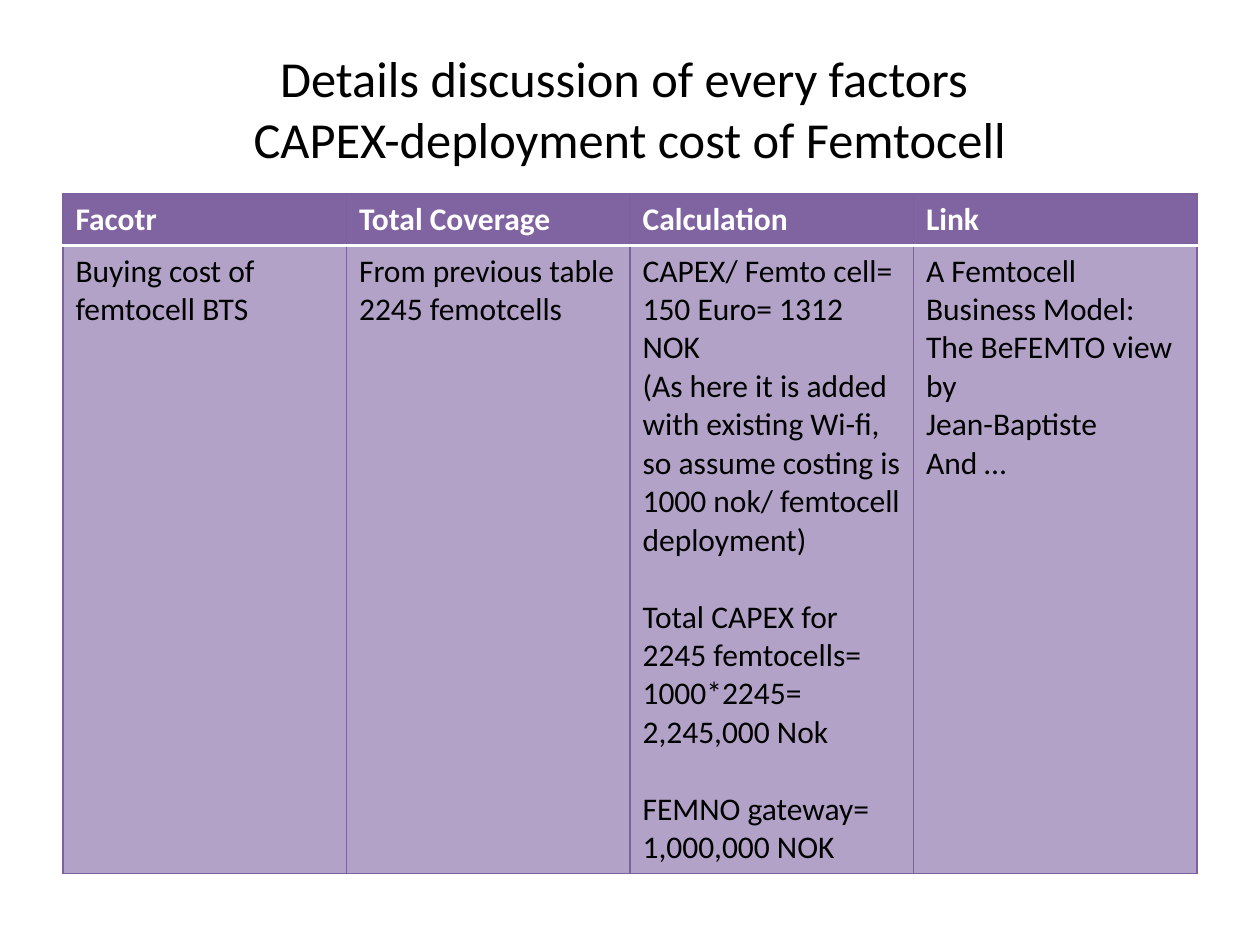
from lxml import etree
from pptx import Presentation
from pptx import util as u
from pptx.dml.color import RGBColor
from pptx.enum import text
from pptx.oxml.ns import qn

PX = 9144  # EMU per px, 100 px to the inch
FONT = "Calibri"
COLORS = {"ink": "000000", "white": "FFFFFF", "header": "8064A2",
          "body": "B3A2C7", "border": "7D60A0"}
LINE_GAP = 22  # points, one line of body text

HEADER = ["Facotr", "Total Coverage", "Calculation", "Link"]
# Each cell is a list of blocks, set one line apart; a block is a list of paragraphs
BODY = [
    [["Buying cost of femtocell BTS"]],
    [["From previous table", "2245 femotcells"]],
    [["CAPEX/ Femto cell= 150 Euro= 1312 NOK",
      "(As here it is added with existing Wi-fi, so assume costing is "
      "1000 nok/ femtocell deployment)"],
     ["Total CAPEX for 2245 femtocells= 1000*2245= 2,245,000 Nok"],
     ["FEMNO gateway= 1,000,000 NOK"]],
    [["A Femtocell Business Model:", "The BeFEMTO view by",
      "Jean-Baptiste", "And …"]],
]


class SlideBuilder:
    def __init__(self, deck):
        self.page = deck.slides.add_slide(deck.slide_layouts[5])

    def format_paragraph(self, para, size, color, bold=False):
        for span in para.runs:
            span.font.name = FONT
            span.font.size = u.Pt(size)
            span.font.bold = bold
            span.font.color.rgb = RGBColor.from_string(COLORS[color])

    def title(self, words, left, top, width, height):
        box = self.page.shapes.title
        box.left, box.top, box.width, box.height = (
            n * PX for n in (left, top, width, height))
        frame = box.text_frame
        frame.text = words
        frame.word_wrap = True
        frame.auto_size = text.MSO_AUTO_SIZE.NONE
        frame.vertical_anchor = text.MSO_ANCHOR.MIDDLE
        frame.paragraphs[0].alignment = text.PP_ALIGN.CENTER
        self.format_paragraph(frame.paragraphs[0], 28.8, "ink")

    def borders(self, cell, **sides):
        """Set each side (L, R, T, B) to a colour name and a width in points."""
        props = cell._tc.get_or_add_tcPr()
        for place, (side, (color, points)) in enumerate(sides.items()):
            line = etree.Element(qn("a:ln" + side), w=str(u.Pt(points)))
            fill = etree.SubElement(line, qn("a:solidFill"))
            etree.SubElement(fill, qn("a:srgbClr"), val=COLORS[color])
            props.insert(place, line)

    def cell(self, cell, blocks, fill, ink, bold, top, bottom):
        cell.fill.solid()
        cell.fill.fore_color.rgb = RGBColor.from_string(COLORS[fill])
        edge = ("border", 0.75)
        self.borders(cell, L=edge, R=edge, T=top, B=bottom)
        frame = cell.text_frame
        frame.text = "\n".join(line for block in blocks for line in block)
        for para in frame.paragraphs:
            self.format_paragraph(para, 18, ink, bold)
        start = 0
        for block in blocks[:-1]:
            start += len(block)
            frame.paragraphs[start].space_before = u.Pt(LINE_GAP)

    def table(self, header, body, left, top, width, heights):
        grid = self.page.shapes.add_table(
            2, len(header), left * PX, top * PX,
            width * PX, sum(heights) * PX).table
        for row, height in zip(grid.rows, heights):
            row.height = height * PX
        edge, rule = ("border", 0.75), ("white", 2)
        for col, (heading, blocks) in enumerate(zip(header, body)):
            self.cell(grid.cell(0, col), [[heading]], "header", "white", True, edge, rule)
            self.cell(grid.cell(1, col), blocks, "body", "ink", False, rule, edge)


def main():
    deck = Presentation()
    deck.slide_width, deck.slide_height = 1000 * PX, 750 * PX
    builder = SlideBuilder(deck)

    # Title
    builder.title("Details discussion of every factors \v"
                  "CAPEX-deployment cost of Femtocell", 50, 30, 900, 111)

    # Cost table
    builder.table(HEADER, BODY, 50, 154, 900, (41, 498))

    deck.save("out.pptx")


if __name__ == "__main__":
    main()
